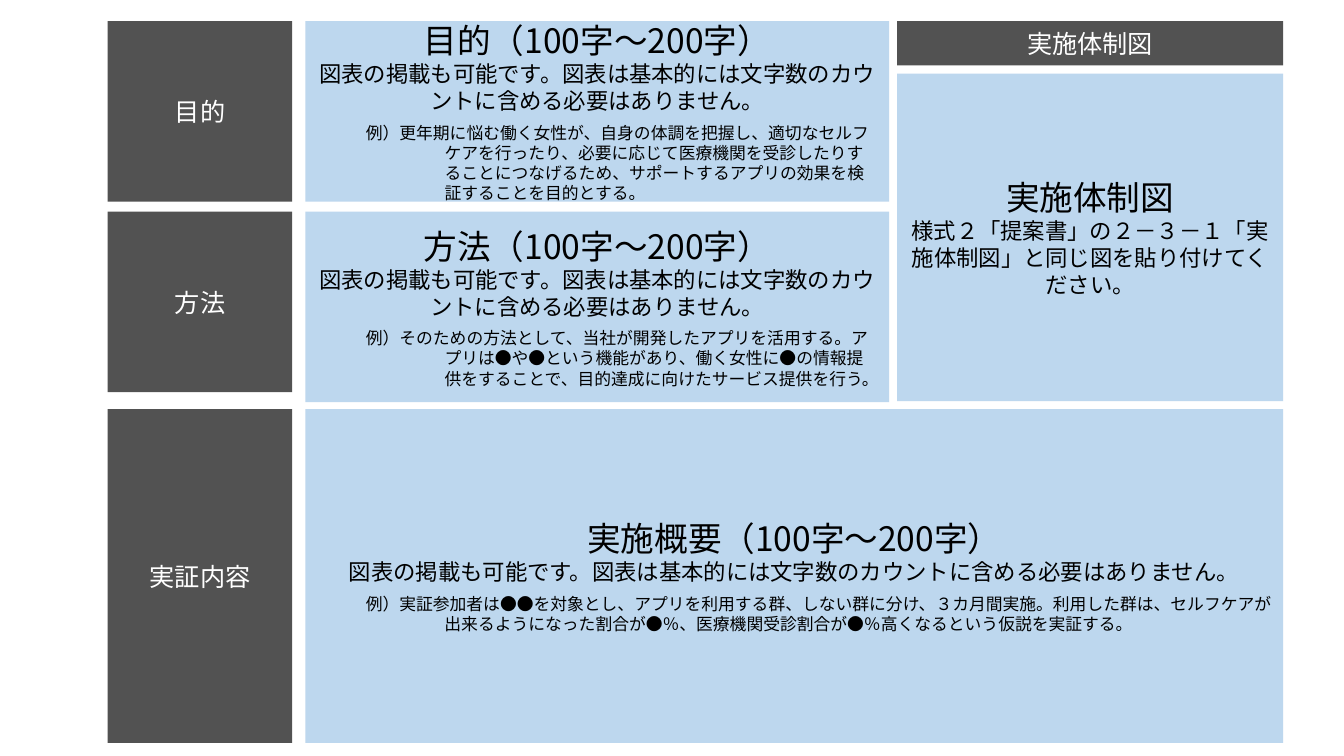
from dataclasses import dataclass

from lxml.etree import SubElement
from pptx import Presentation
from pptx.dml.color import RGBColor
from pptx.enum.lang import MSO_LANGUAGE_ID
from pptx.enum.shapes import MSO_SHAPE
from pptx.enum.text import MSO_ANCHOR, PP_ALIGN
from pptx.oxml.ns import qn
from pptx.slide import Slide
from pptx.text.text import TextFrame
from pptx.util import Pt


@dataclass(frozen=True)
class Theme:
    font: str = "Noto Sans CJK JP"
    label_fill: RGBColor = RGBColor(0x52, 0x52, 0x52)
    panel_fill: RGBColor = RGBColor(0xBD, 0xD7, 0xEE)
    label_text: RGBColor = RGBColor(0xFF, 0xFF, 0xFF)
    panel_text: RGBColor = RGBColor(0x00, 0x00, 0x00)
    label_size: float = 18
    heading_size: float = 24
    guidance_size: float = 16
    example_size: float = 12
    paragraph_gap: float = 6
    example_margin: float = 92.2
    example_indent: float = -56.2


@dataclass(frozen=True)
class Line:
    text: str
    size: float
    space_after: float = 0
    hanging: bool = False


@dataclass(frozen=True)
class Box:
    left: float
    top: float
    width: float
    height: float
    fill: RGBColor
    color: RGBColor
    lines: tuple[Line, ...]


THEME = Theme()
LABEL_LEFT, LABEL_WIDTH = 77, 131.8
PANEL_LEFT, PANEL_WIDTH = 218.2, 416.9
CHART_LEFT, CHART_WIDTH = 640.8, 275.8
FULL_WIDTH = CHART_LEFT + CHART_WIDTH - PANEL_LEFT
PURPOSE_TOP, METHOD_TOP, CONTENT_TOP = 15.1, 151.2, 292.3
ROW_HEIGHT, METHOD_HEIGHT, CONTENT_HEIGHT = 128.9, 136.1, 238.3
CHART_TOP, CHART_LABEL_HEIGHT, CHART_HEIGHT = 52.6, 31.7, 234
GUIDANCE = "図表の掲載も可能です。図表は基本的には文字数のカウントに含める必要はありません。"


def label(left: float, top: float, width: float, height: float, text: str) -> Box:
    lines = (Line(text, THEME.label_size),)
    return Box(left, top, width, height, THEME.label_fill, THEME.label_text, lines)


def panel(left: float, top: float, width: float, height: float, *lines: Line) -> Box:
    return Box(left, top, width, height, THEME.panel_fill, THEME.panel_text, lines)


def guided_lines(heading: str, example: str, example_gap: float = 0) -> tuple[Line, ...]:
    return (
        Line(f"{heading}（100字～200字）", THEME.heading_size),
        Line(GUIDANCE, THEME.guidance_size, THEME.paragraph_gap),
        Line(f"例）{example}", THEME.example_size, example_gap, hanging=True),
    )


BOXES = (
    label(LABEL_LEFT, PURPOSE_TOP, LABEL_WIDTH, ROW_HEIGHT, "目的"),
    label(LABEL_LEFT, METHOD_TOP, LABEL_WIDTH, ROW_HEIGHT, "方法"),
    label(LABEL_LEFT, CONTENT_TOP, LABEL_WIDTH, CONTENT_HEIGHT, "実証内容"),
    label(CHART_LEFT, PURPOSE_TOP, CHART_WIDTH, CHART_LABEL_HEIGHT, "実施体制図"),
    panel(PANEL_LEFT, PURPOSE_TOP, PANEL_WIDTH, ROW_HEIGHT, *guided_lines(
        "目的",
        "更年期に悩む働く女性が、自身の体調を把握し、適切なセルフケアを行ったり、"
        "必要に応じて医療機関を受診したりすることにつなげるため、"
        "サポートするアプリの効果を検証することを目的とする。")),
    panel(PANEL_LEFT, METHOD_TOP, PANEL_WIDTH, METHOD_HEIGHT, *guided_lines(
        "方法",
        "そのための方法として、当社が開発したアプリを活用する。"
        "アプリは●や●という機能があり、働く女性に●の情報提供をすることで、"
        "目的達成に向けたサービス提供を行う。")),
    panel(PANEL_LEFT, CONTENT_TOP, FULL_WIDTH, CONTENT_HEIGHT, *guided_lines(
        "実施概要",
        "実証参加者は●●を対象とし、アプリを利用する群、しない群に分け、３カ月間実施。"
        "利用した群は、セルフケアが出来るようになった割合が●％、"
        "医療機関受診割合が●％高くなるという仮説を実証する。",
        THEME.paragraph_gap)),
    panel(
        CHART_LEFT, CHART_TOP, CHART_WIDTH, CHART_HEIGHT,
        Line("実施体制図", THEME.heading_size),
        Line("様式２「提案書」の２－３－１「実施体制図」と同じ図を貼り付けてください。",
             THEME.guidance_size)),
)


def write_line(text_frame: TextFrame, index: int, line: Line, color: RGBColor) -> None:
    paragraph = text_frame.add_paragraph() if index else text_frame.paragraphs[0]
    paragraph.alignment = PP_ALIGN.LEFT if line.hanging else PP_ALIGN.CENTER
    paragraph.space_after = Pt(line.space_after)
    if line.hanging:
        properties = paragraph._p.get_or_add_pPr()
        properties.set("marL", str(Pt(THEME.example_margin)))
        properties.set("indent", str(Pt(THEME.example_indent)))
    run = paragraph.add_run()
    run.text = line.text
    run.font.color.rgb = color
    font_format = {
        "name": THEME.font,
        "size": Pt(line.size),
        "language_id": MSO_LANGUAGE_ID.JAPANESE,
    }
    for attribute, value in font_format.items():
        setattr(run.font, attribute, value)
    SubElement(run._r.get_or_add_rPr(), qn("a:ea"), typeface=THEME.font)


def draw_box(slide: Slide, box: Box) -> None:
    shape = slide.shapes.add_shape(
        MSO_SHAPE.RECTANGLE, Pt(box.left), Pt(box.top), Pt(box.width), Pt(box.height))
    shape.shadow.inherit = False
    shape.fill.solid()
    shape.fill.fore_color.rgb = box.fill
    shape.line.fill.background()
    frame_format = {"word_wrap": True, "vertical_anchor": MSO_ANCHOR.MIDDLE}
    for attribute, value in frame_format.items():
        setattr(shape.text_frame, attribute, value)
    for index, line in enumerate(box.lines):
        write_line(shape.text_frame, index, line, box.color)


def main() -> None:
    presentation = Presentation()
    presentation.slide_width = Pt(960)
    presentation.slide_height = Pt(540)
    slide = presentation.slides.add_slide(presentation.slide_layouts[6])
    for box in BOXES:
        draw_box(slide, box)
    presentation.save("out.pptx")


if __name__ == "__main__":
    main()
